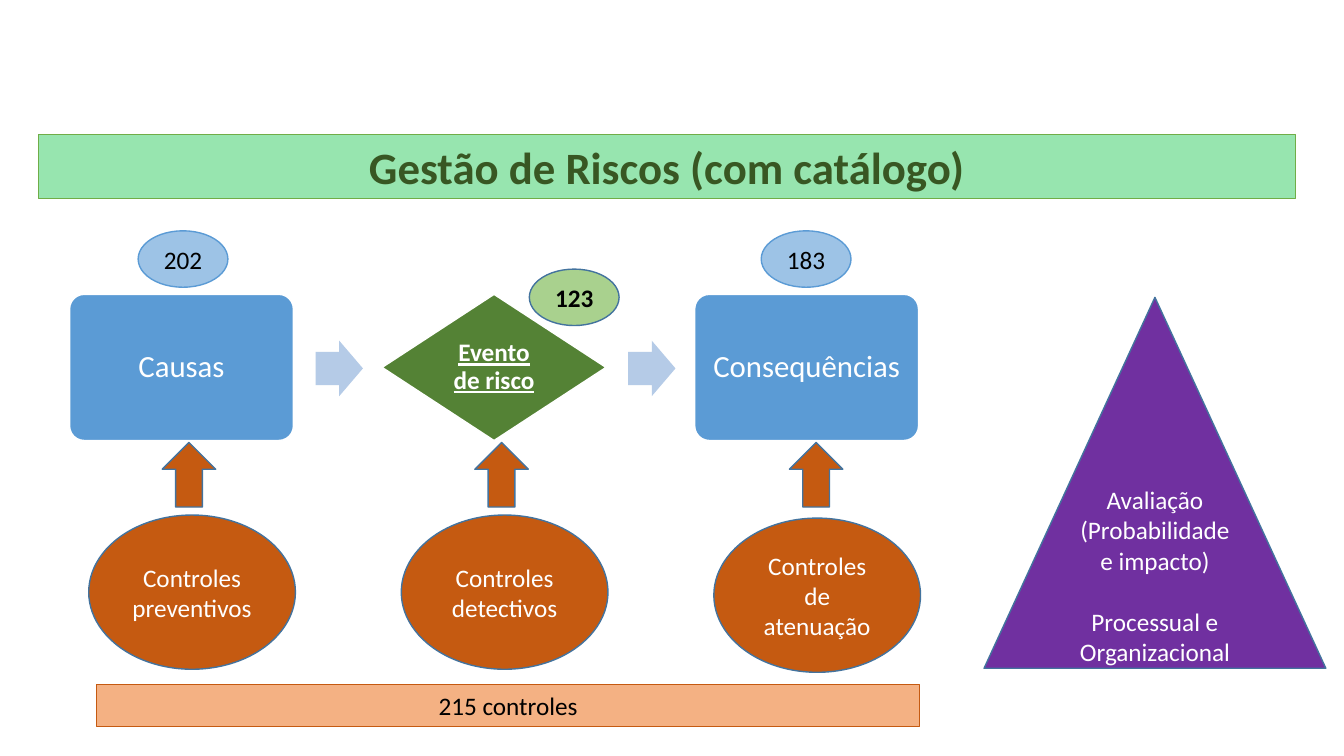
import pptx
import pptx.util
from pptx.dml.color import RGBColor
from pptx.enum.shapes import MSO_SHAPE
from pptx.enum.text import MSO_ANCHOR, MSO_AUTO_SIZE, PP_ALIGN
from pptx.util import Inches

WHITE = RGBColor(0xFF, 0xFF, 0xFF)
BLACK = RGBColor(0x00, 0x00, 0x00)
MINT = RGBColor(0x97, 0xE5, 0xAF)
LEAF = RGBColor(0x70, 0xAD, 0x47)
FOREST = RGBColor(0x38, 0x57, 0x23)
GREEN = RGBColor(0x54, 0x82, 0x35)
LIGHT_GREEN = RGBColor(0xA9, 0xD1, 0x8E)
BLUE = RGBColor(0x5B, 0x9B, 0xD5)
LIGHT_BLUE = RGBColor(0x9D, 0xC3, 0xE6)
PALE_BLUE = RGBColor(0xB5, 0xCB, 0xE7)
OUTLINE = RGBColor(0x43, 0x73, 0x9E)
ORANGE = RGBColor(0xC5, 0x5A, 0x11)
LIGHT_ORANGE = RGBColor(0xF4, 0xB1, 0x83)
PURPLE = RGBColor(0x70, 0x30, 0xA0)


def write(shape, text, size=18, color=WHITE, bold=False, underline=False,
          spacing=1.0, gap=0, inset=None):
    """Centre the text in the shape; each line of text is a paragraph."""
    frame = shape.text_frame
    frame.word_wrap = True
    frame.auto_size = MSO_AUTO_SIZE.NONE
    frame.vertical_anchor = MSO_ANCHOR.MIDDLE
    if inset is not None:
        frame.margin_left = frame.margin_right = Inches(inset)
        frame.margin_top = frame.margin_bottom = Inches(inset)
    frame.text = text
    for index, paragraph in enumerate(frame.paragraphs):
        paragraph.alignment = PP_ALIGN.CENTER
        paragraph.line_spacing = spacing
        paragraph.space_before = pptx.util.Pt(gap if index else 0)
        font = paragraph.runs[0].font
        font.name = "Calibri"
        font.size = pptx.util.Pt(size)
        font.bold = bold
        font.underline = underline
        font.color.rgb = color


def draw(kind, left, top, width, height, fill, line=OUTLINE):
    shape = slide.shapes.add_shape(
        kind, Inches(left), Inches(top), Inches(width), Inches(height))
    shape.shadow.inherit = False
    shape.fill.solid()
    shape.fill.fore_color.rgb = fill
    if line is None:
        shape.line.fill.background()
    else:
        shape.line.color.rgb = line
        shape.line.width = pptx.util.Pt(1)
    return shape


presentation = pptx.Presentation()
presentation.slide_width = Inches(13.33)
presentation.slide_height = Inches(7.5)
slide = presentation.slides.add_slide(presentation.slide_layouts[5])

title = slide.shapes.title
title.left, title.top = Inches(0.38), Inches(1.33)
title.width, title.height = Inches(12.47), Inches(0.64)
title.fill.solid()
title.fill.fore_color.rgb = MINT
title.line.color.rgb = LEAF
title.line.width = pptx.util.Pt(0.75)
write(title, "Gestão de Riscos (com catálogo)", size=32, color=FOREST,
      bold=True, inset=0.05)

# Flow from causes through the risk event to consequences
STEP = 3.1
flow = [
    (MSO_SHAPE.ROUNDED_RECTANGLE, "Causas", BLUE,
     dict(size=22, inset=0.09)),
    (MSO_SHAPE.FLOWCHART_DECISION, "Evento de risco", GREEN,
     dict(bold=True, underline=True, inset=0.07)),
    (MSO_SHAPE.ROUNDED_RECTANGLE, "Consequências", BLUE,
     dict(size=22, inset=0.09)),
]
for column, (kind, label, fill, text_format) in enumerate(flow):
    stage = draw(kind, 0.69 + column * STEP, 2.92, 2.22, 1.45, fill, WHITE)
    if kind == MSO_SHAPE.ROUNDED_RECTANGLE:
        stage.adjustments[0] = 0.1
    write(stage, label, spacing=0.9, **text_format)

for column in range(2):
    flow_arrow = draw(MSO_SHAPE.RIGHT_ARROW, 3.13 + column * STEP, 3.38,
                      0.47, 0.55, PALE_BLUE, None)
    flow_arrow.adjustments[0] = 0.6

# Controls acting on each stage
controls = [
    ("Controles preventivos", 5.11, 1.61),
    ("Controles detectivos", 5.11, 4.71),
    ("Controles de atenuação", 5.14, 7.83),
]
for column, (label, top, arrow_left) in enumerate(controls):
    control = draw(MSO_SHAPE.OVAL, 0.88 + column * STEP, top, 2.05, 1.53, ORANGE)
    write(control, label)
    draw(MSO_SHAPE.UP_ARROW, arrow_left, 4.39, 0.53, 0.64, ORANGE)

assessment = draw(MSO_SHAPE.ISOSCELES_TRIANGLE, 9.76, 2.95, 3.39, 3.68, PURPLE)
write(assessment,
      "Avaliação (Probabilidade e impacto)\nProcessual e Organizacional",
      gap=22)

# Catalogue counts
counts = [
    ("123", 5.25, 2.67, LIGHT_GREEN, OUTLINE, True),
    ("183", 7.55, 2.29, LIGHT_BLUE, BLUE, False),
    ("202", 1.37, 2.29, LIGHT_BLUE, BLUE, False),
]
for number, left, top, fill, line, bold in counts:
    count = draw(MSO_SHAPE.OVAL, left, top, 0.89, 0.56, fill, line)
    write(count, number, color=BLACK, bold=bold)

control_total = draw(MSO_SHAPE.RECTANGLE, 0.96, 6.79, 8.16, 0.42,
                     LIGHT_ORANGE, ORANGE)
write(control_total, "215 controles", color=BLACK)

presentation.save("out.pptx")
